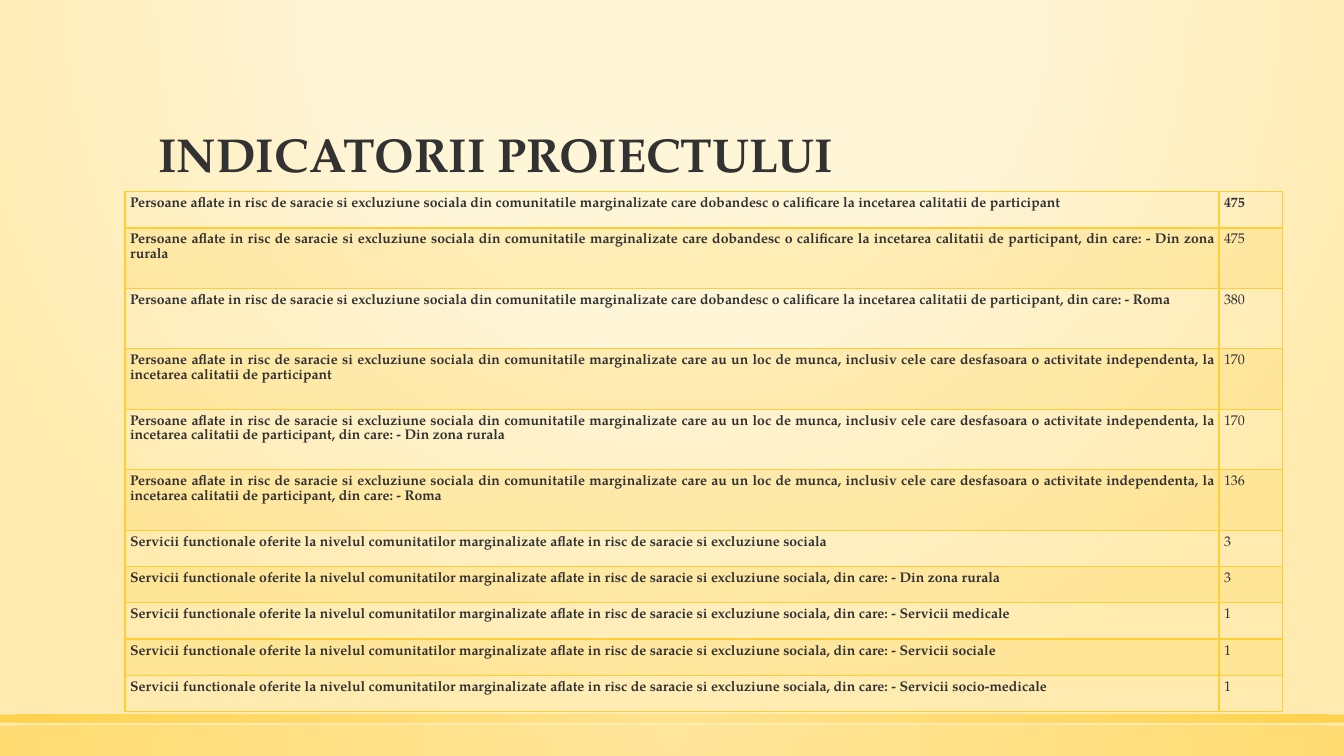
from dataclasses import dataclass

from lxml.etree import SubElement
from pptx import Presentation
from pptx.dml.color import RGBColor as Color
from pptx.enum.shapes import MSO_SHAPE as Shape
from pptx.enum.text import MSO_ANCHOR as Anchor, PP_ALIGN as Align
from pptx.oxml import parse_xml
from pptx.oxml.ns import nsdecls, qn
from pptx.util import Inches, Pt


@dataclass(frozen=True)
class Theme:
    """Colours, font and type sizes of the deck."""
    ink: str = "323232"
    gold: str = "FFCD36"
    light_gold: str = "FFE186"
    cream: str = "FFF5D7"
    sand: str = "FFEBAF"
    font: str = "TeX Gyre Pagella"
    title_size: int = 34
    table_size: int = 10
    band_opacity: int = 20


PEOPLE = "Persoane aflate in risc de saracie si excluziune sociala din comunitatile marginalizate care "
QUALIFIED = PEOPLE + "dobandesc o calificare la incetarea calitatii de participant"
EMPLOYED = PEOPLE + ("au un loc de munca, inclusiv cele care desfasoara o activitate independenta, "
                     "la incetarea calitatii de participant")
SERVICES = ("Servicii functionale oferite la nivelul comunitatilor marginalizate "
            "aflate in risc de saracie si excluziune sociala")
OF_WHICH = ", din care: - "
SHORT_ROW, TALL_ROW = 0.36, 0.6

INDICATORS = [
    (QUALIFIED, "475", SHORT_ROW),
    (QUALIFIED + OF_WHICH + "Din zona rurala", "475", TALL_ROW),
    (QUALIFIED + OF_WHICH + "Roma", "380", TALL_ROW),
    (EMPLOYED, "170", TALL_ROW),
    (EMPLOYED + OF_WHICH + "Din zona rurala", "170", TALL_ROW),
    (EMPLOYED + OF_WHICH + "Roma", "136", TALL_ROW),
    (SERVICES, "3", SHORT_ROW),
    (SERVICES + OF_WHICH + "Din zona rurala", "3", SHORT_ROW),
    (SERVICES + OF_WHICH + "Servicii medicale", "1", SHORT_ROW),
    (SERVICES + OF_WHICH + "Servicii sociale", "1", SHORT_ROW),
    (SERVICES + OF_WHICH + "Servicii socio-medicale", "1", SHORT_ROW),
]


class SlideBuilder:
    """Draws styled elements on the current slide."""

    def __init__(self, page, theme):
        """Keep the slide and its style."""
        self.page = page
        self.theme = theme

    def fade(self, owner, stops, focus):
        """Replace the solid fill of an element with a circular gradient."""
        colours = "".join(
            f'<a:gs pos="{place * 1000}"><a:srgbClr val="{colour}">'
            f'<a:alpha val="{opacity * 1000}"/></a:srgbClr></a:gs>'
            for place, colour, opacity in stops)
        left, top, right, bottom = (edge * 1000 for edge in focus)
        gradient = parse_xml(
            f'<a:gradFill {nsdecls("a")} rotWithShape="1"><a:gsLst>{colours}</a:gsLst>'
            f'<a:path path="circle"><a:fillToRect l="{left}" t="{top}" r="{right}" b="{bottom}"/>'
            '</a:path></a:gradFill>')
        solid = owner.xpath(".//a:solidFill")[0]
        solid.getparent().replace(solid, gradient)

    def background(self):
        """Fill the slide with a glow from above."""
        self.page.background.fill.solid()
        stops = [(0, self.theme.cream, 59), (40, self.theme.cream, 66), (100, self.theme.sand, 100)]
        self.fade(self.page.element.xpath(".//p:bgPr")[0], stops, (50, -80, 50, 180))

    def strip(self, top, height, opacity):
        """Add a full-width golden strip."""
        box = self.page.shapes.add_shape(
            Shape.RECTANGLE, Inches(0), Inches(top), Inches(13.33), Inches(height))
        box.shadow.inherit = False
        box.line.fill.background()
        box.fill.solid()
        stops = [(0, self.theme.light_gold, opacity), (100, self.theme.gold, opacity)]
        self.fade(box.element.spPr, stops, (50, 50, 50, 50))

    def add_span(self, para, text, size, bold):
        """Add one styled run to a paragraph."""
        span = para.add_run()
        span.text = text
        span.font.name = self.theme.font
        span.font.size = Pt(size)
        span.font.bold = bold
        span.font.color.rgb = Color.from_string(self.theme.ink)

    def title(self, text, left, top, width, height):
        """Add the bottom-anchored heading."""
        box = self.page.shapes.add_textbox(Inches(left), Inches(top), Inches(width), Inches(height))
        frame = box.text_frame
        frame.word_wrap = True
        frame.vertical_anchor = Anchor.BOTTOM
        para = frame.paragraphs[0]
        para.line_spacing = 0.9
        self.add_span(para, text, self.theme.title_size, True)

    def borders(self, cell, widths):
        """Draw the four cell borders with the given widths in points."""
        properties = cell._tc.get_or_add_tcPr()
        for side, width in zip("LRTB", widths):
            line = SubElement(properties, qn(f"a:ln{side}"), w=str(Pt(width)))
            SubElement(SubElement(line, qn("a:solidFill")), qn("a:srgbClr"), val=self.theme.gold)

    def cell(self, cell, text, bold, widths, banded):
        """Style and fill in one table cell."""
        cell.margin_left = cell.margin_right = Inches(0.05)
        cell.margin_top = cell.margin_bottom = Inches(0.05)
        self.borders(cell, widths)
        if banded:
            cell.fill.solid()
            cell.fill.fore_color.rgb = Color.from_string(self.theme.gold)
            tint = cell._tc.tcPr.xpath("./a:solidFill/a:srgbClr")[0]
            SubElement(tint, qn("a:alpha"), val=str(self.theme.band_opacity * 1000))
        else:
            cell.fill.background()
        para = cell.text_frame.paragraphs[0]
        para.alignment = Align.JUSTIFY
        para.line_spacing = 1.07
        self.add_span(para, text, self.theme.table_size, bold)

    def table(self, indicators, left, top, columns):
        """Add the indicator table with alternate rows tinted."""
        height = sum(row_height for _, _, row_height in indicators)
        table = self.page.shapes.add_table(
            len(indicators), len(columns), Inches(left), Inches(top),
            Inches(sum(columns)), Inches(height)).table
        table.first_row = False
        table.horz_banding = False
        for column, width in zip(table.columns, columns):
            column.width = Inches(width)
        for index, (label, value, row_height) in enumerate(indicators):
            table.rows[index].height = Inches(row_height)
            widths = (1, 1, 2 if index == 1 else 1, 2 if index == 0 else 1)
            banded = index % 2 == 1
            self.cell(table.cell(index, 0), label, True, widths, banded)
            self.cell(table.cell(index, 1), value, index == 0, widths, banded)


def main():
    """Build and save the deck."""
    deck = Presentation()
    deck.slide_width = Inches(13.33)
    deck.slide_height = Inches(7.5)
    builder = SlideBuilder(deck.slides.add_slide(deck.slide_layouts[6]), Theme())
    builder.background()
    builder.strip(7.2, 0.3, 50)
    builder.strip(7.09, 0.08, 80)
    builder.title("INDICATORII PROIECTULUI", 1.47, 0.51, 10.4, 1.35)
    builder.table(INDICATORS, 1.24, 1.9, (10.85, 0.63))
    deck.save("out.pptx")


if __name__ == "__main__":
    main()
